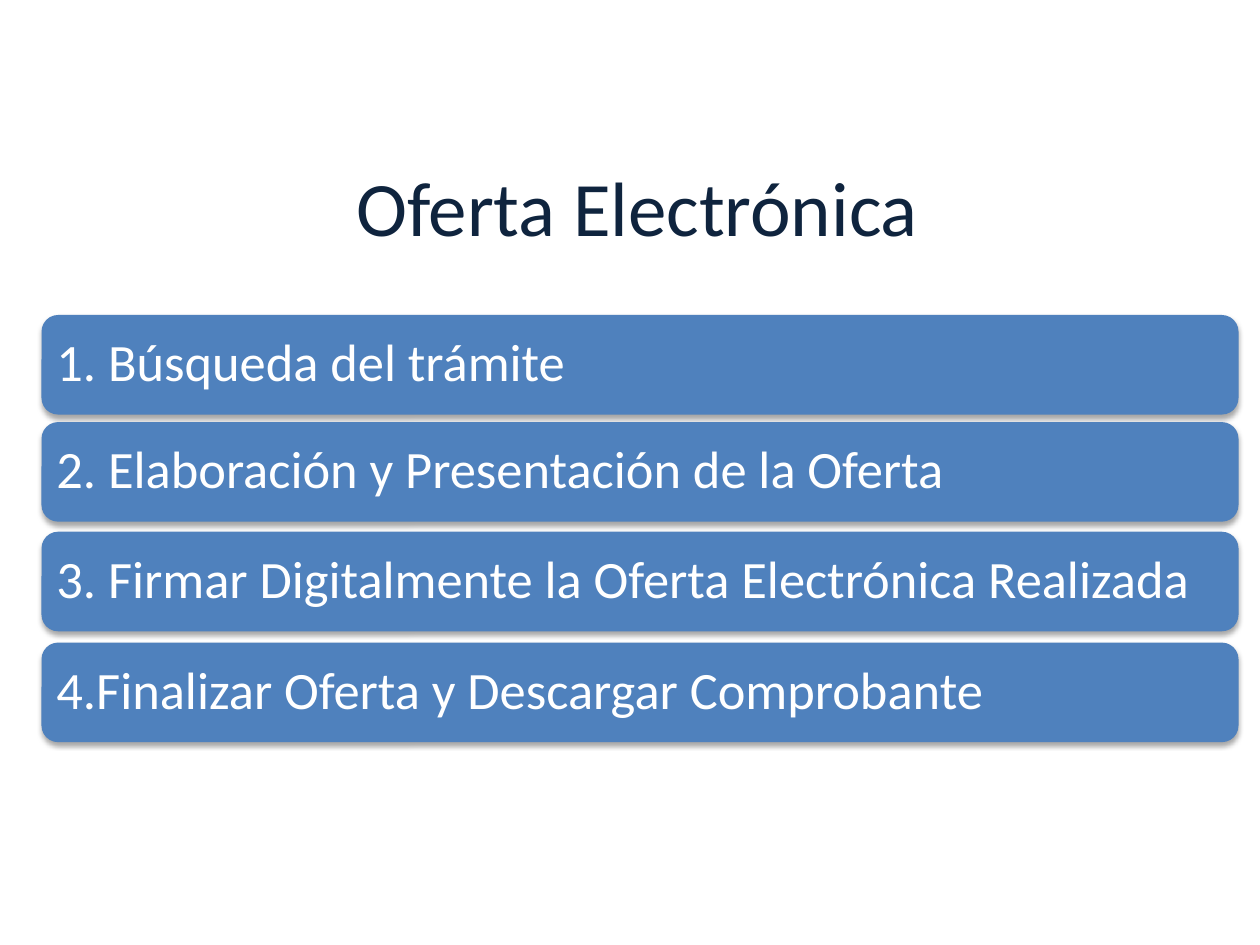
from dataclasses import dataclass

from lxml.etree import SubElement
from pptx import Presentation
from pptx.dml.color import RGBColor
from pptx.enum.shapes import MSO_SHAPE as Preset
from pptx.enum.text import MSO_ANCHOR as Anchor, PP_ALIGN as Align
from pptx.oxml.ns import qn
from pptx.shapes.autoshape import Shape
from pptx.slide import Slide
from pptx.text.text import TextFrame
from pptx.util import Inches, Pt

NAVY = RGBColor(0x0F, 0x24, 0x3E)
BLUE = RGBColor(0x4F, 0x81, 0xBD)
WHITE = RGBColor(0xFF, 0xFF, 0xFF)
FONT = "Calibri"


@dataclass
class Step:
    top: float
    label: str
    align: Align = Align.LEFT


STEPS = [
    Step(2.5, "1. Búsqueda del trámite", Align.JUSTIFY),
    Step(3.35, "2. Elaboración y Presentación de la Oferta"),
    Step(4.22, "3. Firmar Digitalmente la Oferta Electrónica Realizada"),
    Step(5.1, "4.Finalizar Oferta y Descargar Comprobante"),
]


def write(frame: TextFrame, text: str, size: int, color: RGBColor, align: Align) -> None:
    frame.text = text
    frame.word_wrap = True
    frame.vertical_anchor = Anchor.MIDDLE
    paragraph = frame.paragraphs[0]
    paragraph.alignment = align
    font = paragraph.runs[0].font
    font.name, font.size, font.color.rgb = FONT, Pt(size), color


def add_soft_shadow(bar: Shape) -> None:
    bar.shadow.inherit = False
    effects = bar._element.spPr.find(qn("a:effectLst"))
    shadow = SubElement(effects, qn("a:outerShdw"), blurRad=str(Pt(3.1)),
                        dist=str(Pt(1.8)), dir="5400000", rotWithShape="0")
    color = SubElement(shadow, qn("a:srgbClr"), val="000000")
    SubElement(color, qn("a:alpha"), val="35000")


def add_step(slide: Slide, step: Step) -> None:
    bar = slide.shapes.add_shape(Preset.ROUNDED_RECTANGLE, Inches(0.33),
                                 Inches(step.top), Inches(9.5), Inches(0.79))
    bar.fill.solid()
    bar.fill.fore_color.rgb = BLUE
    bar.line.fill.background()
    add_soft_shadow(bar)
    frame = bar.text_frame
    # The rounded corners already inset the text by about 0.04"
    frame.margin_left = frame.margin_right = Inches(0.08)
    frame.margin_top = frame.margin_bottom = Inches(0.08)
    write(frame, step.label, 30, WHITE, step.align)
    frame.paragraphs[0].line_spacing = 0.9


def main() -> None:
    deck = Presentation()
    deck.slide_width, deck.slide_height = Inches(10), Inches(7.5)
    slide = deck.slides.add_slide(deck.slide_layouts[6])

    # Title
    title = slide.shapes.add_textbox(Inches(0.31), Inches(1.17), Inches(9.5), Inches(0.92))
    write(title.text_frame, "Oferta Electrónica", 44, NAVY, Align.CENTER)

    # Steps of the electronic offer
    for step in STEPS:
        add_step(slide, step)

    deck.save("out.pptx")


if __name__ == "__main__":
    main()
